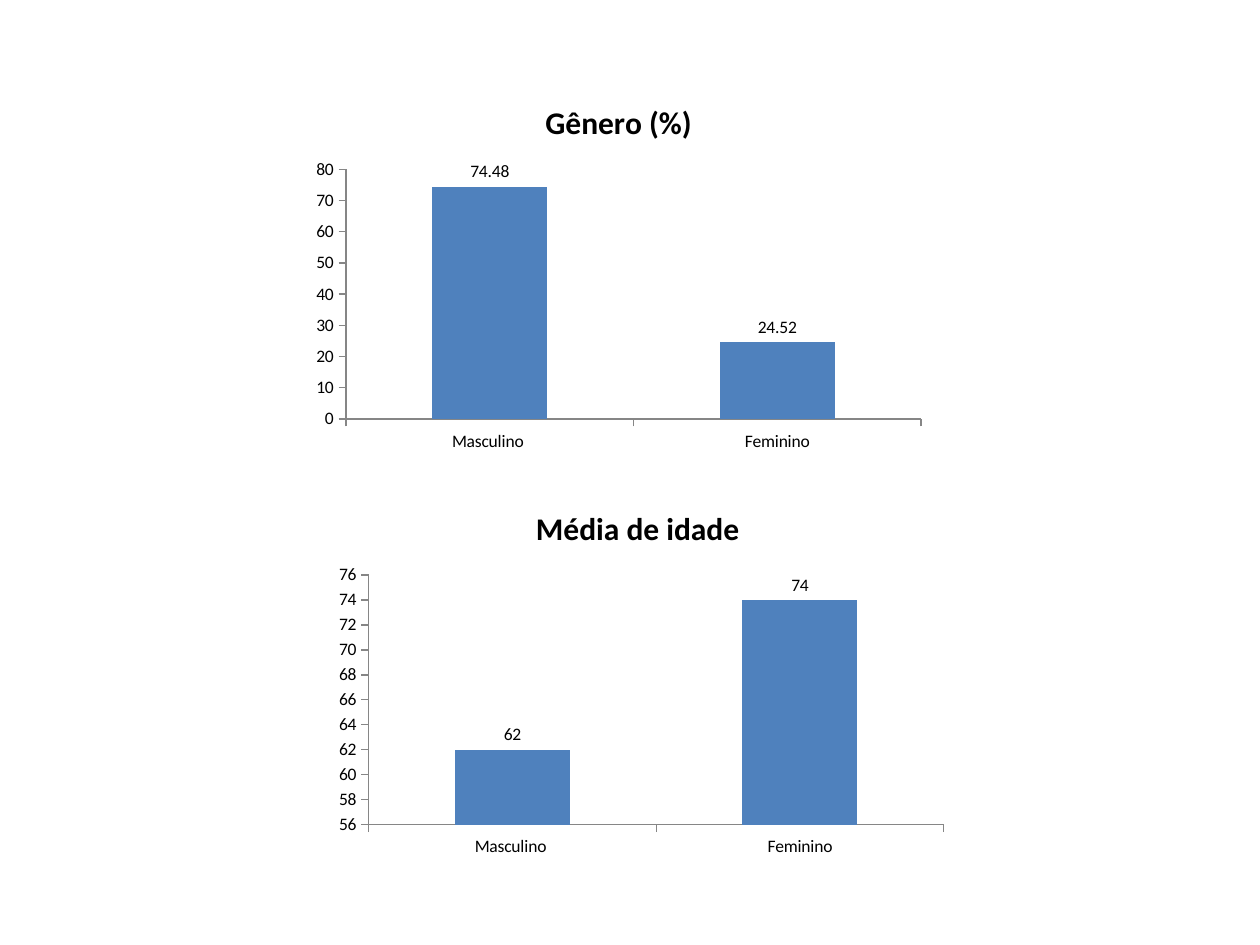
from pptx import Presentation
from pptx.chart.data import CategoryChartData
from pptx.dml.color import RGBColor
from pptx.enum.chart import XL_CHART_TYPE as ChartType
from pptx.enum.chart import XL_LABEL_POSITION as LabelPos
from pptx.enum.chart import XL_TICK_MARK as TickMark
from pptx.util import Inches, Pt


def rgb(value):
    return RGBColor.from_string(value)


def apply_format(target, values):
    for name, value in values.items():
        setattr(target, name, value)


class SlideBuilder:
    FONT = {"name": "Calibri", "size": Pt(10)}
    TITLE_FONT = {"name": "Calibri", "size": Pt(18), "bold": True}
    AXIS = {"has_major_gridlines": False, "major_tick_mark": TickMark.OUTSIDE,
            "minor_tick_mark": TickMark.NONE}
    LABELS = {"show_value": True, "position": LabelPos.OUTSIDE_END}
    TEXT, BAR, LINE = "000000", "4F81BD", "868686"

    def __init__(self, slide):
        self.slide = slide

    def style_font(self, font, values):
        apply_format(font, values)
        font.color.rgb = rgb(self.TEXT)

    def add_title(self, chart, text):
        chart.has_title = True
        title = chart.chart_title
        title.include_in_layout = False
        p = title.text_frame.paragraphs[0]
        r = p.add_run()
        r.text = text
        self.style_font(r.font, self.TITLE_FONT)

    def add_column_chart(self, title, categories, values, box, scale):
        data = CategoryChartData()
        data.categories = categories
        data.add_series("Series 1", values)
        chart = self.slide.shapes.add_chart(
            ChartType.COLUMN_CLUSTERED, *map(Inches, box), data).chart
        chart.has_legend = False
        self.style_font(chart.font, self.FONT)
        self.add_title(chart, title)

        for axis in (chart.category_axis, chart.value_axis):
            apply_format(axis, self.AXIS)
            axis.format.line.color.rgb = rgb(self.LINE)
            axis.format.line.width = Pt(0.75)
        apply_format(chart.value_axis, scale)

        plot = chart.plots[0]
        apply_format(plot, {"gap_width": 150, "vary_by_categories": False,
                            "has_data_labels": True})
        apply_format(plot.data_labels, self.LABELS)
        self.style_font(plot.data_labels.font, self.FONT)
        fill = plot.series[0].format.fill
        fill.solid()
        fill.fore_color.rgb = rgb(self.BAR)


def main():
    prs = Presentation()
    prs.slide_width, prs.slide_height = Inches(10), Inches(7.5)
    builder = SlideBuilder(prs.slides.add_slide(prs.slide_layouts[6]))
    genders = ["Masculino ", "Feminino"]
    width, height = 5, 3
    charts = [
        ("Gênero (%)", (74.48, 24.52), (2.41, 0.64),
         {"minimum_scale": 0, "maximum_scale": 80, "major_unit": 10}),
        ("Média de idade ", (62, 74), (2.59, 3.86),
         {"minimum_scale": 56, "maximum_scale": 76, "major_unit": 2}),
    ]
    for title, values, corner, scale in charts:
        builder.add_column_chart(title, genders, values, (*corner, width, height), scale)
    prs.save("out.pptx")


if __name__ == "__main__":
    main()
